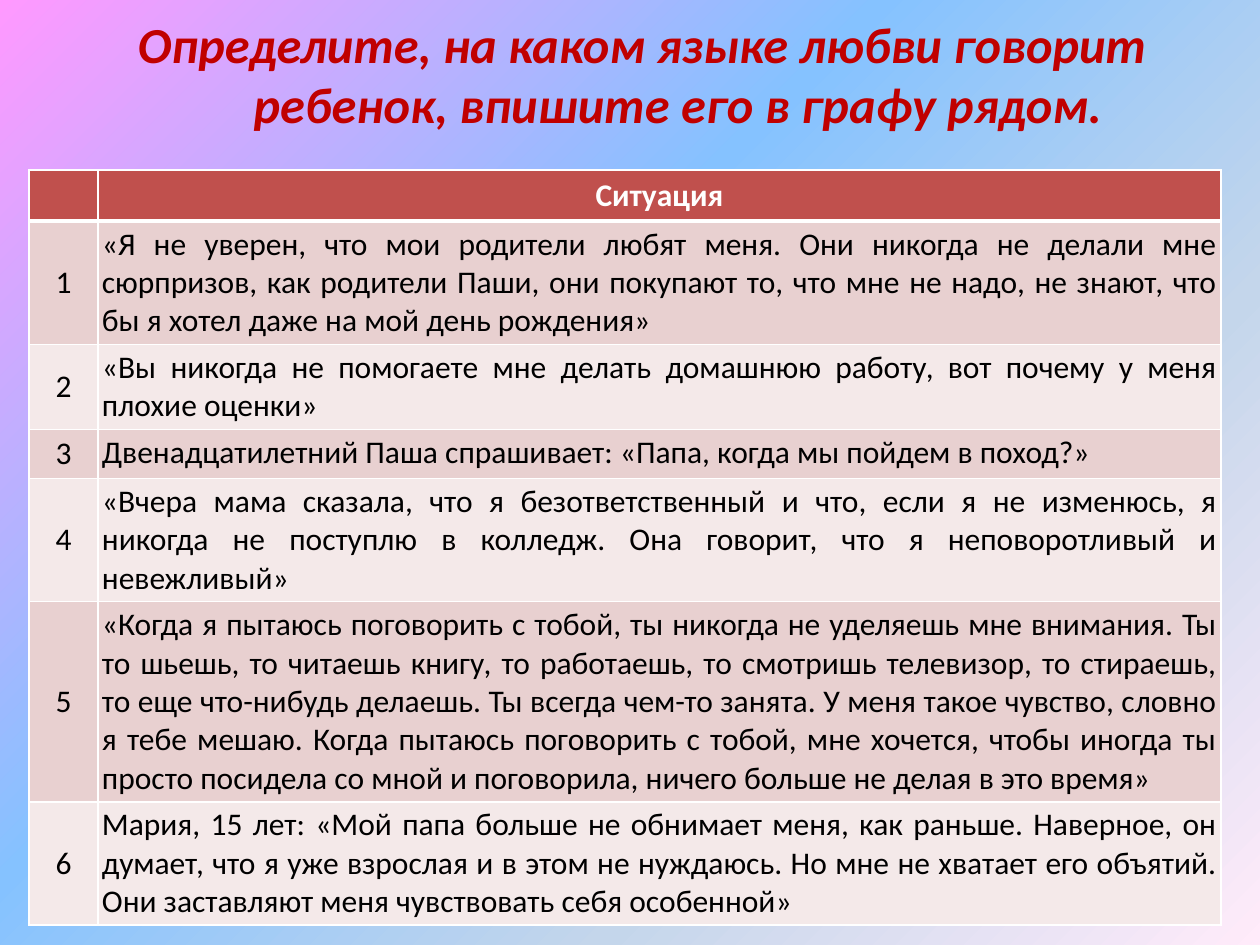
"""Build the slide with a table of situations about children's love languages."""
import lxml.etree
import pptx
import pptx.dml.color
import pptx.enum.text
import pptx.oxml
import pptx.oxml.ns
import pptx.util

PX = 914400 / 126
NAMESPACE = 'xmlns:a="http://schemas.openxmlformats.org/drawingml/2006/main"'
ALIGN = pptx.enum.text.PP_ALIGN
ANCHOR = pptx.enum.text.MSO_ANCHOR


def px(*lengths):
    return [pptx.util.Emu(round(length * PX)) for length in lengths]


def color(hex_string):
    return pptx.dml.color.RGBColor.from_string(hex_string)


SITUATIONS = [
    "«Я не уверен, что мои родители любят меня. Они никогда не делали мне сюрпризов, "
    "как родители Паши, они покупают то, что мне не надо, не знают, что бы я хотел "
    "даже на мой день рождения»",
    "«Вы никогда не помогаете мне делать домашнюю работу, вот почему у меня плохие оценки»",
    "Двенадцатилетний Паша спрашивает: «Папа, когда мы пойдем в поход?»",
    "«Вчера мама сказала, что я безответственный и что, если я не изменюсь, я никогда "
    "не поступлю в колледж. Она говорит, что я неповоротливый и невежливый»",
    "«Когда я пытаюсь поговорить с тобой, ты никогда не уделяешь мне внимания. Ты то "
    "шьешь, то читаешь книгу, то работаешь, то смотришь телевизор, то стираешь, то еще "
    "что-нибудь делаешь. Ты всегда чем-то занята. У меня такое чувство, словно я тебе "
    "мешаю. Когда пытаюсь поговорить с тобой, мне хочется, чтобы иногда ты просто "
    "посидела со мной и поговорила, ничего больше не делая в это время»",
    "Мария, 15 лет: «Мой папа больше не обнимает меня, как раньше. Наверное, он думает, "
    "что я уже взрослая и в этом не нуждаюсь. Но мне не хватает его объятий. Они "
    "заставляют меня чувствовать себя особенной»",
]
ROWS = [("", "Ситуация")] + [(str(n), text) for n, text in enumerate(SITUATIONS, 1)]
ROW_HEIGHTS = [50, 120, 83, 49, 120, 195, 120]
COLUMN_WIDTHS = [69, 1123]
GRADIENT_STOPS = [(0, "FF99FF"), (40, "85C2FF"), (70, "C4D6EB"), (100, "FFEBFA")]

presentation = pptx.Presentation()
presentation.slide_width, presentation.slide_height = px(1260, 945)
slide = presentation.slides.add_slide(presentation.slide_layouts[5])

background = slide.background.fill
background.gradient()
background.gradient_angle = 315
stop_list = background.gradient_stops[0]._gs.getparent()
for stop in list(stop_list):
    stop_list.remove(stop)
for position, hex_string in GRADIENT_STOPS:
    stop_list.append(pptx.oxml.parse_xml(
        f'<a:gs {NAMESPACE} pos="{position * 1000}"><a:srgbClr val="{hex_string}"/></a:gs>'))

title = slide.shapes.title
title.left, title.top, title.width, title.height = px(88, 0, 1109, 147)
title.text_frame.text = "Определите, на каком языке любви говорит ребенок, впишите его в графу рядом."
title.text_frame.auto_size = pptx.enum.text.MSO_AUTO_SIZE.NONE
title.text_frame.vertical_anchor = ANCHOR.MIDDLE
paragraph = title.text_frame.paragraphs[0]
paragraph.alignment = ALIGN.CENTER
hanging = px(71)[0]
properties = paragraph._p.get_or_add_pPr()
properties.set("marL", str(hanging))
properties.set("indent", str(-hanging))
paragraph.font.name = "Calibri"
paragraph.font.size = pptx.util.Pt(28.8)
paragraph.font.bold = paragraph.font.italic = True
paragraph.font.color.rgb = color("C00000")

frame = slide.shapes.add_table(
    len(ROWS), 2, *px(29, 170, sum(COLUMN_WIDTHS), sum(ROW_HEIGHTS)))
table = frame.table
for column, width in zip(table.columns, px(*COLUMN_WIDTHS)):
    column.width = width
for row, height in zip(table.rows, px(*ROW_HEIGHTS)):
    row.height = height

for row_index, texts in enumerate(ROWS):
    header = row_index == 0
    fill = "C0504D" if header else ("F4E9E9", "E8D0D0")[row_index % 2]
    for column_index, text in enumerate(texts):
        cell = table.cell(row_index, column_index)
        cell_properties = cell._tc.get_or_add_tcPr()
        for side in "LRTB":
            thick = (header and side == "B") or (row_index == 1 and side == "T")
            cell_properties.append(pptx.oxml.parse_xml(
                f'<a:ln{side} {NAMESPACE} w="{38100 if thick else 12700}">'
                '<a:solidFill><a:srgbClr val="FFFFFF"/></a:solidFill>'
                f'</a:ln{side}>'))
        cell.fill.solid()
        cell.fill.fore_color.rgb = color(fill)
        if not header:
            cell.margin_left, cell.margin_right, cell.margin_top, cell.margin_bottom = px(4, 4, 4, 4)
            cell.vertical_anchor = ANCHOR.TOP if column_index else ANCHOR.MIDDLE
        cell.text = text
        paragraph = cell.text_frame.paragraphs[0]
        paragraph.alignment = ALIGN.JUSTIFY if column_index and not header else ALIGN.CENTER
        paragraph.font.name = "Calibri"
        paragraph.font.size = pptx.util.Pt(18)
        paragraph.font.bold = header
        paragraph.font.color.rgb = color("FFFFFF" if header else "000000")

presentation.save("out.pptx")
